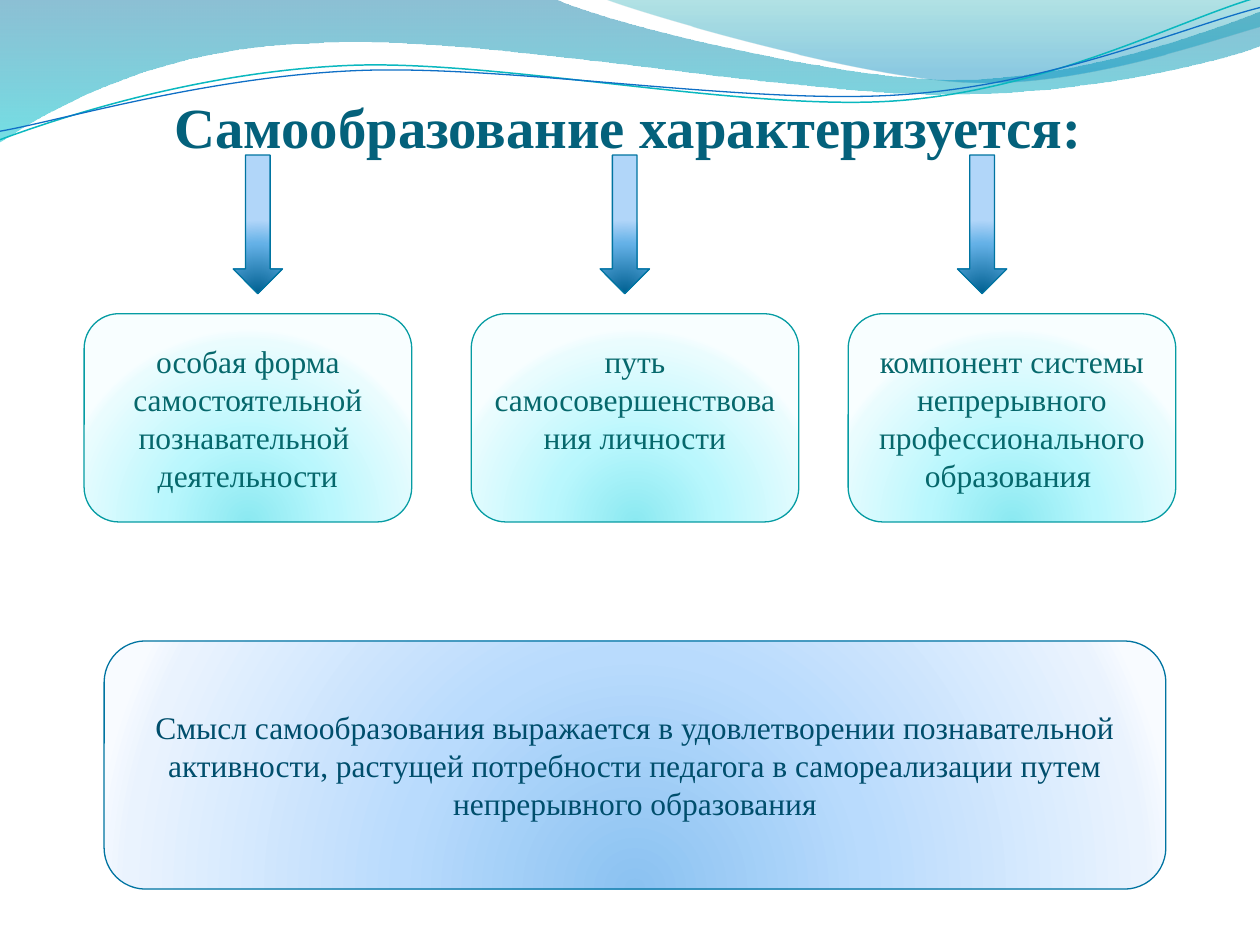
"""Build a slide on the features of self-education."""
from dataclasses import dataclass
from lxml import etree
from pptx import Presentation
from pptx import util as u
from pptx.dml.color import RGBColor
from pptx.enum import shapes, text
from pptx.oxml.ns import nsdecls, qn


@dataclass(frozen=True)
class Theme:
    """Colours, gradients and type sizes."""
    font: str = "Times New Roman"
    title_size: float = 32.4
    body_size: float = 18
    title: str = "04617B"
    teal_text: str = "06686C"
    blue_text: str = "004E6C"
    teal_line: str = "069CA3"
    blue_line: str = "0074A1"
    teal: tuple = ((0, "8BE9F1"), (43, "B9F7FD"), (93, "EAFCFE"), (100, "F8FEFF"))
    blue: tuple = ((0, "8BC2F1"), (43, "B9DBFD"), (93, "EAF3FE"), (100, "F8FBFF"))
    arrow: tuple = ((0, "006091"), (68, "64B1E7"), (100, "B1D6F9"))
    wide_wave: tuple = ((0, "0074A1", 45), (100, "00C6CF", 55))
    small_wave: tuple = ((0, "00A1A9", 30), (80, "008BBF", 45))
    teal_curve: str = "0AB8BF"
    blue_curve: str = "0F6FC6"


THEME = Theme()
TITLE = "Самообразование характеризуется: "
FEATURES = [
    {"text": "особая форма самостоятельной познавательной  деятельности",
     "box_left": 48.1, "arrow_left": 133.2},
    {"text": "путь самосовершенствования личности",
     "box_left": 269.3, "arrow_left": 342.9},
    {"text": "компонент системы непрерывного профессионального образования ",
     "box_left": 484.7, "arrow_left": 547.1},
]
MEANING = ("Смысл самообразования выражается в удовлетворении познавательной активности, "
           "растущей потребности педагога в самореализации путем непрерывного образования")

WAVES = [
    (THEME.wide_wave, (0, 0), [
        [(316.8, -0.7)],
        [(342.7, 12.2), (478.1, 45.4), (545.8, 45.4)],
        [(614.2, 45.4), (689.8, 18.7), (720, 6.5)],
        [(720.7, 25.9)],
        [(707.8, 31.7), (626.4, 54.7), (537.1, 54)],
        [(447.8, 54), (275, 20.2), (185, 24.5)],
        [(92.9, 25.9), (33.1, 59.8), (-0.7, 81.4)]]),
    (THEME.small_wave, (344.9, -0.7), [
        [(366.5, 7.9), (491, 44.6), (553.7, 46.8)],
        [(616.3, 49.7), (691.9, 23), (720, 15.1)],
        [(720, 0)]]),
]
CURVE_ROTATION = 357.3
CURVES = [
    (THEME.teal_curve, 0.85, (-1.4, 62.9), [
        [(33.8, 51.7), (114.1, 29.4), (199.8, 29.9)],
        [(284.9, 30.3), (425.8, 67.3), (512.4, 64.8)],
        [(599, 62.4), (676.5, 25.7), (720.2, 15.5)]]),
    (THEME.blue_curve, 0.75, (-1.1, 58), [
        [(32.9, 53.8), (118.3, 32.5), (204.1, 33)],
        [(290.6, 33.4), (428.9, 63.8), (515.5, 61.4)],
        [(601.3, 59.6), (678.5, 30.1), (721.4, 21.3)]]),
]


def fill_gradient(shape, stops, radial=True):
    """Fill a shape with a radial or a downward gradient."""
    shape.fill.solid()
    solid = shape._element.spPr.find(qn("a:solidFill"))
    marks = "".join(
        f'<a:gs pos="{place * 1000}"><a:srgbClr val="{color}">'
        f'<a:alpha val="{(alpha or [100])[0] * 1000}"/></a:srgbClr></a:gs>'
        for place, color, *alpha in stops)
    direction = ('<a:path path="circle"><a:fillToRect l="50000" t="130000" r="50000" '
                 'b="-30000"/></a:path>' if radial else '<a:lin ang="5400000" scaled="0"/>')
    gradient = etree.fromstring(
        f'<a:gradFill {nsdecls("a")} rotWithShape="1"><a:gsLst>{marks}</a:gsLst>'
        f'{direction}</a:gradFill>')
    solid.getparent().replace(solid, gradient)


def set_line(shape, color, width=0.75):
    """Give a shape a plain outline."""
    shape.line.color.rgb = RGBColor.from_string(color)
    shape.line.width = u.Pt(width)


def write_text(shape, content, *, color, size=THEME.body_size, bold=False,
               anchor=text.MSO_ANCHOR.MIDDLE, top=3.6, side=7.2):
    """Write one centred paragraph into a shape."""
    frame = shape.text_frame
    frame.word_wrap = True
    frame.vertical_anchor = anchor
    frame.margin_top = u.Pt(top)
    frame.margin_left = frame.margin_right = u.Pt(side)
    paragraph = frame.paragraphs[0]
    paragraph.alignment = text.PP_ALIGN.CENTER
    run = paragraph.add_run()
    run.text = content
    run.font.name = THEME.font
    run.font.size = u.Pt(size)
    run.font.bold = bold
    run.font.color.rgb = RGBColor.from_string(color)


def add_preset(slide, kind, box, stops, line):
    """Add a preset shape with a radial gradient."""
    shape = slide.shapes.add_shape(kind, *map(u.Pt, box))
    shape.shadow.inherit = False
    fill_gradient(shape, stops)
    set_line(shape, line)
    return shape


def add_outline(slide, start, segments, close):
    """Add a freeform whose three-point segments are cubic curves."""
    points = [tuple(map(u.Pt, point)) for segment in segments for point in segment]
    builder = slide.shapes.build_freeform(*map(u.Pt, start))
    builder.add_line_segments(points, close=close)
    shape = builder.convert_to_shape()
    shape.shadow.inherit = False
    nodes = iter(list(shape._element.spPr.iter(qn("a:lnTo"))))
    for segment in segments:
        group = [next(nodes) for _ in segment]
        if len(group) == 3:
            curve = etree.Element(qn("a:cubicBezTo"))
            group[0].addprevious(curve)
            for node in group:
                curve.append(node[0])
                node.getparent().remove(node)
    return shape


def main():
    """Assemble and save the slide."""
    presentation = Presentation()
    presentation.slide_width, presentation.slide_height = u.Pt(720), u.Pt(540)
    slide = presentation.slides.add_slide(presentation.slide_layouts[6])

    for stops, start, segments in WAVES:
        wave = add_outline(slide, start, segments, close=True)
        fill_gradient(wave, stops, radial=False)
        wave.line.fill.background()
    for color, width, start, segments in CURVES:
        curve = add_outline(slide, start, segments, close=False)
        curve.rotation = CURVE_ROTATION
        curve.fill.background()
        set_line(curve, color, width)

    title = slide.shapes.add_textbox(*map(u.Pt, (36, 52.4, 653.8, 93)))
    write_text(title, TITLE, color=THEME.title, size=THEME.title_size, bold=True,
               anchor=text.MSO_ANCHOR.TOP, top=0, side=0)

    kinds = shapes.MSO_SHAPE
    for feature in FEATURES:
        box = add_preset(slide, kinds.ROUNDED_RECTANGLE,
                         (feature["box_left"], 179.3, 187.2, 119),
                         THEME.teal, THEME.teal_line)
        write_text(box, feature["text"], color=THEME.teal_text,
                   anchor=text.MSO_ANCHOR.TOP, top=10.5)
    for feature in FEATURES:
        add_preset(slide, kinds.DOWN_ARROW, (feature["arrow_left"], 88.6, 28.2, 79.2),
                   THEME.arrow, THEME.blue_line)

    meaning = add_preset(slide, kinds.ROUNDED_RECTANGLE, (59.5, 366.3, 606.7, 141.8),
                         THEME.blue, THEME.blue_line)
    write_text(meaning, MEANING, color=THEME.blue_text)
    presentation.save("out.pptx")


if __name__ == "__main__":
    main()
